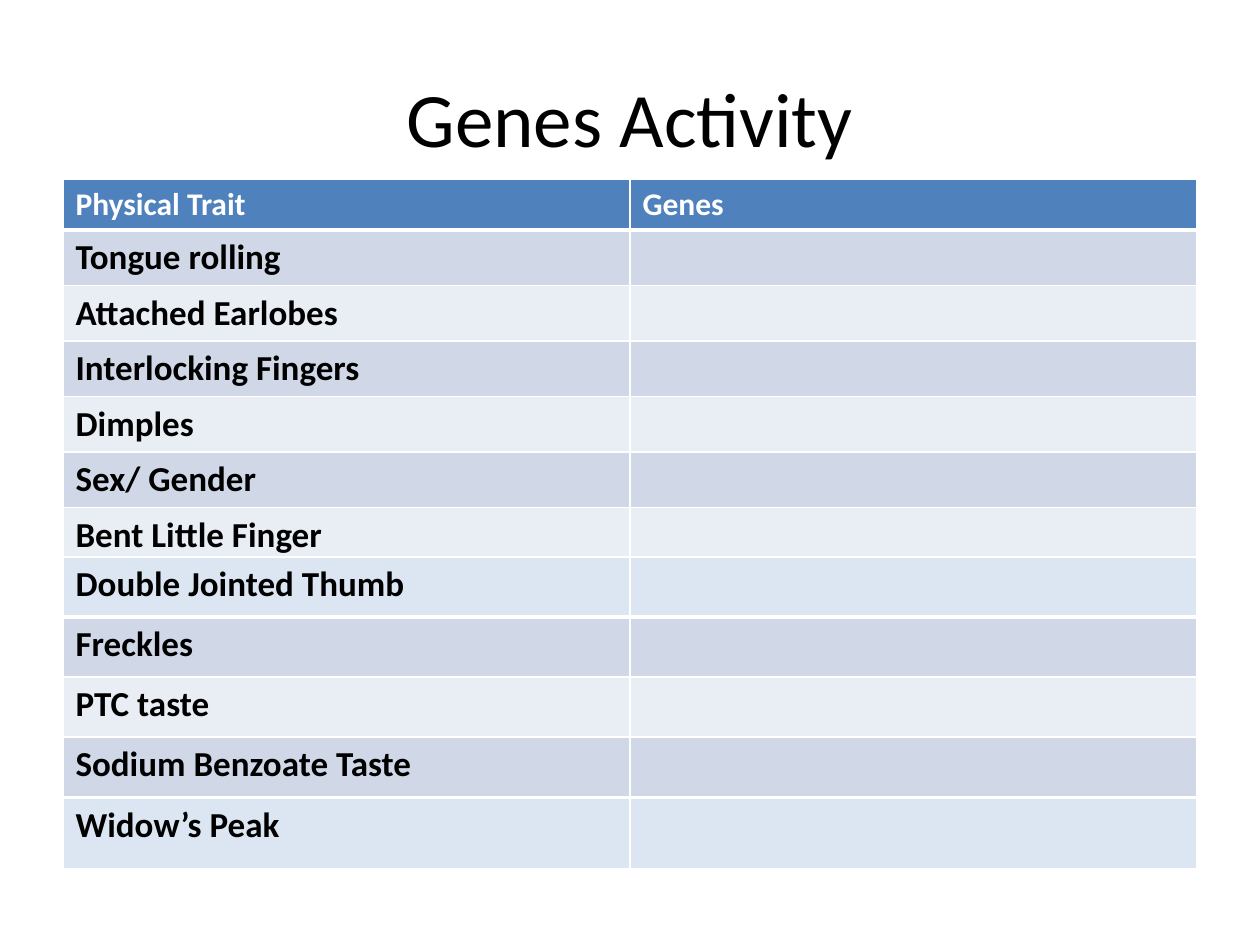
from dataclasses import dataclass

from pptx import Presentation
from pptx.dml.color import RGBColor
from pptx.enum.text import MSO_ANCHOR, PP_ALIGN
from pptx.oxml.ns import qn
from pptx.util import Emu, Pt
from lxml.etree import SubElement

PX_PER_INCH = 126


@dataclass(frozen=True)
class Theme:
    font: str = "Calibri"
    black: str = "000000"
    white: str = "FFFFFF"
    header: str = "4F81BD"
    band_dark: str = "D0D8E8"
    band_light: str = "E9EDF4"
    highlight: str = "DCE6F2"
    title_size: int = 44
    header_size: int = 18
    body_size: int = 20
    thin: int = 1
    thick: int = 3


THEME = Theme()
LEFT, WIDTH = 63, 1134
COLUMNS = 2


def px(length):
    return Emu(round(length * 914400 / PX_PER_INCH))


def write_text(text_frame, text, size=THEME.body_size, color=THEME.black,
               bold=False, align=PP_ALIGN.LEFT):
    paragraph = text_frame.paragraphs[0]
    paragraph.alignment = align
    run = paragraph.add_run()
    run.text = text
    run.font.name = THEME.font
    run.font.size = Pt(size)
    run.font.bold = bold
    run.font.color.rgb = RGBColor.from_string(color)


def format_cell(cell, fill, top, bottom):
    # Borders come before the fill in the cell properties
    properties = cell._tc.get_or_add_tcPr()
    widths = {"a:lnL": THEME.thin, "a:lnR": THEME.thin, "a:lnT": top, "a:lnB": bottom}
    for tag, width in widths.items():
        line = SubElement(properties, qn(tag), w=str(Pt(width)))
        solid = SubElement(line, qn("a:solidFill"))
        SubElement(solid, qn("a:srgbClr"), val=THEME.white)
    cell.fill.solid()
    cell.fill.fore_color.rgb = RGBColor.from_string(fill)


def add_title(slide, text):
    title = slide.shapes.title
    title.left, title.top, title.width, title.height = px(LEFT), px(38), px(WIDTH), px(158)
    title.text_frame.vertical_anchor = MSO_ANCHOR.MIDDLE
    write_text(title.text_frame, text, size=THEME.title_size, align=PP_ALIGN.CENTER)


def add_trait_table(slide, top, row_height, rows, first_fill, **first_format):
    """The first row has its own fill and a thick rule below; the rest are banded."""
    frame = slide.shapes.add_table(len(rows), COLUMNS, px(LEFT), px(top),
                                   px(WIDTH), px(row_height * len(rows)))
    table = frame.table
    table.first_row = table.horz_banding = False
    for column in table.columns:
        column.width = px(WIDTH // COLUMNS)
    bands = (THEME.band_light, THEME.band_dark)
    for index, texts in enumerate(rows):
        table.rows[index].height = px(row_height)
        fill = bands[index % 2] if index else first_fill
        text_format = {} if index else first_format
        for column, text in enumerate(texts):
            cell = table.cell(index, column)
            format_cell(cell, fill,
                        top=THEME.thick if index == 1 else THEME.thin,
                        bottom=THEME.thin if index else THEME.thick)
            if text:
                write_text(cell.text_frame, text, bold=True, **text_format)


def trait_rows(*traits):
    return [(trait, "") for trait in traits]


def main():
    presentation = Presentation()
    presentation.slide_width, presentation.slide_height = px(1260), px(945)
    slide = presentation.slides.add_slide(presentation.slide_layouts[5])

    add_title(slide, "Genes Activity")

    # Main table with its column headings; its last row is left open
    add_trait_table(
        slide, 179, 51,
        [("Physical Trait", "Genes")] + trait_rows(
            "Tongue rolling", "Attached Earlobes", "Interlocking Fingers",
            "Dimples", "Sex/ Gender", "Bent Little Finger", ""),
        THEME.header, size=THEME.header_size, color=THEME.white)

    # Continuation tables
    add_trait_table(
        slide, 557, 60,
        trait_rows("Double Jointed Thumb", "Freckles", "PTC taste",
                   "Sodium Benzoate Taste"),
        THEME.highlight)
    add_trait_table(slide, 798, 72, trait_rows("Widow’s Peak"), THEME.highlight)

    presentation.save("out.pptx")


if __name__ == "__main__":
    main()
